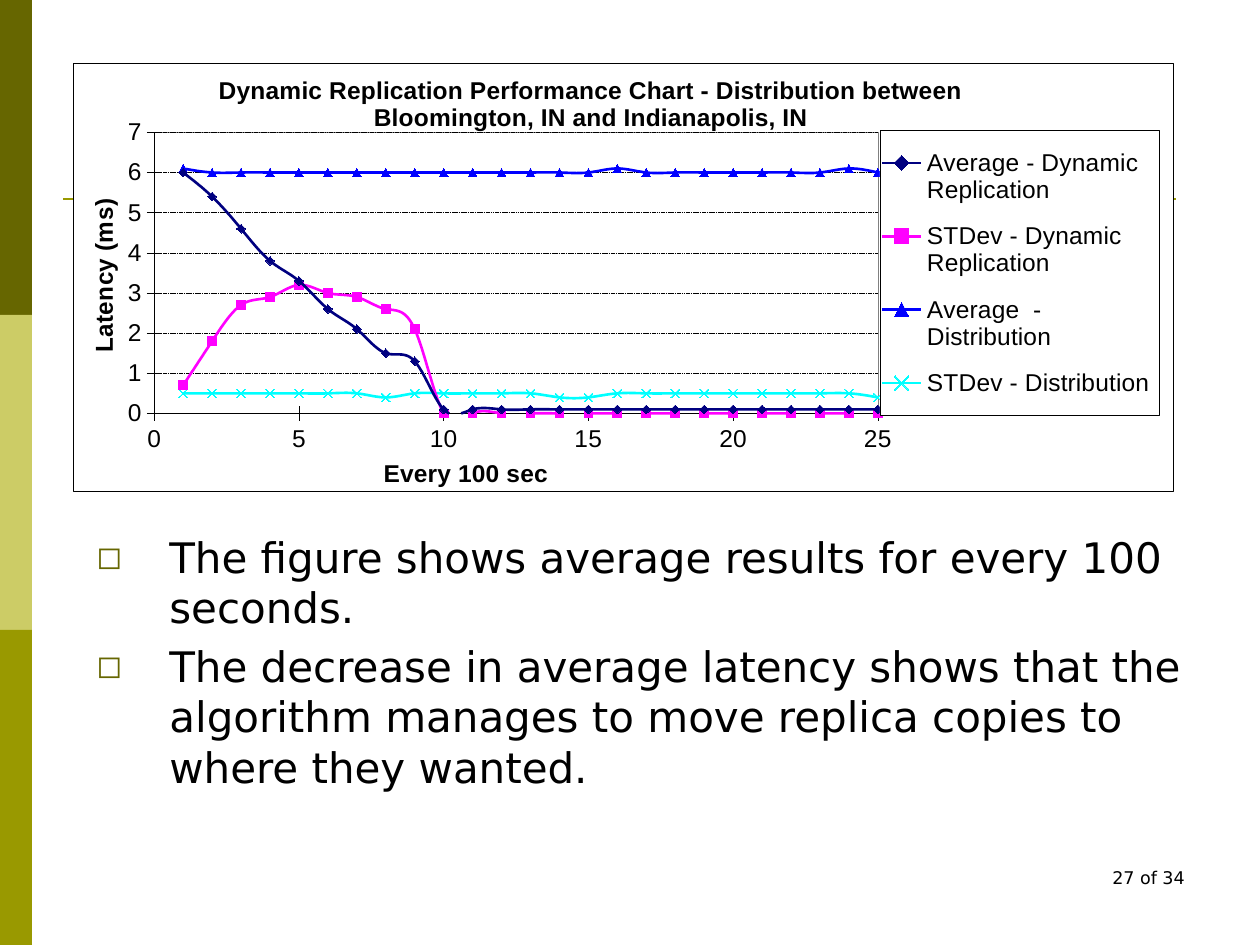
from lxml import etree
from pptx import Presentation
from pptx.chart.data import XyChartData
from pptx.dml.color import RGBColor
from pptx.enum.chart import XL_CHART_TYPE, XL_LEGEND_POSITION, XL_MARKER_STYLE, XL_TICK_MARK
from pptx.enum.dml import MSO_LINE
from pptx.enum.shapes import MSO_CONNECTOR, MSO_SHAPE
from pptx.enum.text import PP_ALIGN
from pptx.oxml import parse_xml
from pptx.oxml.ns import nsdecls, qn
from pptx.util import Emu, Pt

SCATTER = XL_CHART_TYPE.XY_SCATTER_SMOOTH
LEGEND_RIGHT = XL_LEGEND_POSITION.RIGHT
TICK_CROSS, TICK_NONE = XL_TICK_MARK.CROSS, XL_TICK_MARK.NONE
SHORT_DASH = MSO_LINE.SQUARE_DOT
STRAIGHT, RECTANGLE = MSO_CONNECTOR.STRAIGHT, MSO_SHAPE.RECTANGLE
LEFT, RIGHT = PP_ALIGN.LEFT, PP_ALIGN.RIGHT
PX_PER_INCH = 126
CHART_WIDTH, CHART_HEIGHT = 1100, 432
BODY_FONT, CHART_FONT = "DejaVu Sans", "Arial"
BLACK, WHITE, GRAY, OLIVE = "000000", "FFFFFF", "808080", "666600"
BANDS = [OLIVE, "CCCC66", "999900"]
POINTS = [
    "The figure shows average results for every 100 seconds.",
    "The decrease in average latency shows that the algorithm manages to move "
    "replica copies to where they wanted.",
]
TITLE = ("Dynamic Replication Performance Chart - Distribution between "
         "Bloomington, IN and Indianapolis, IN")
SERIES = [
    ("Average - Dynamic Replication", "000080", XL_MARKER_STYLE.DIAMOND,
     [6, 5.4, 4.6, 3.8, 3.3, 2.6, 2.1, 1.5, 1.3] + [0.1] * 16),
    ("STDev - Dynamic Replication", "FF00FF", XL_MARKER_STYLE.SQUARE,
     [0.7, 1.8, 2.7, 2.9, 3.2, 3, 2.9, 2.6, 2.1] + [0] * 16),
    ("Average  - Distribution ", "0000FF", XL_MARKER_STYLE.TRIANGLE,
     [6.1] + [6] * 14 + [6.1] + [6] * 7 + [6.1, 6]),
    ("STDev - Distribution ", "00FFFF", XL_MARKER_STYLE.X,
     [0.5] * 7 + [0.4] + [0.5] * 5 + [0.4] * 2 + [0.5] * 9 + [0.4]),
]


def px(length):
    """Turn pixels into EMU."""
    return Emu(round(length * 914400 / PX_PER_INCH))


def color(value):
    """Turn a hex string into a colour."""
    return RGBColor.from_string(value)


def apply_format(target, values):
    """Set each named attribute on the target."""
    for name, value in values.items():
        setattr(target, name, value)


def set_font(font, name, size, bold=False):
    """Give a font its face, size and black colour."""
    apply_format(font, {"name": name, "size": Pt(size), "bold": bold})
    font.color.rgb = color(BLACK)


def set_line(line, value, width):
    """Give a line its colour and width."""
    line.color.rgb = color(value)
    line.width = Pt(width)


def add_band(page, top, height, fill):
    """Add one block of the left colour strip."""
    band = page.shapes.add_shape(RECTANGLE, 0, px(top), px(32), px(height))
    band.shadow.inherit = False
    band.fill.solid()
    band.fill.fore_color.rgb = color(fill)
    band.line.fill.background()


def add_rule(page, left, right, top):
    """Add the horizontal rule."""
    rule = page.shapes.add_connector(STRAIGHT, px(left), px(top), px(right), px(top))
    set_line(rule.line, BANDS[2], 1.5)
    etree.SubElement(rule.element.spPr, qn("a:effectLst"))


def add_bullet(para):
    """Give a paragraph a hollow square bullet with a hanging indent."""
    properties = para._p.get_or_add_pPr()
    properties.set("marL", str(px(73)))
    properties.set("indent", str(-px(73)))
    color_part = etree.SubElement(properties, qn("a:buClr"))
    etree.SubElement(color_part, qn("a:srgbClr"), val=OLIVE)
    etree.SubElement(properties, qn("a:buSzPct"), val="75000")
    etree.SubElement(properties, qn("a:buFont"), typeface=BODY_FONT)
    etree.SubElement(properties, qn("a:buChar"), char="◻")


def add_text(page, bounds, lines, size, align=LEFT, bulleted=False):
    """Add a text box with one paragraph per line."""
    box = page.shapes.add_textbox(*map(px, bounds))
    frame = box.text_frame
    frame.word_wrap = True
    for index, line in enumerate(lines):
        para = frame.paragraphs[0] if index == 0 else frame.add_paragraph()
        para.alignment = align
        span = para.add_run()
        span.text = line
        set_font(span.font, BODY_FONT, size)
        if bulleted:
            para.space_before = Pt(size * 0.2)
            add_bullet(para)


def place_part(part, bounds, inner=False):
    """Fix the place of a chart part, in px from the chart corner."""
    for old in part.findall(qn("c:layout")):
        part.remove(old)
    layout = etree.Element(qn("c:layout"))
    manual = etree.SubElement(layout, qn("c:manualLayout"))
    if inner:
        etree.SubElement(manual, qn("c:layoutTarget"), val="inner")
    for name in ("xMode", "yMode"):
        etree.SubElement(manual, qn(f"c:{name}"), val="edge")
    for name, length, whole in zip("xywh", bounds, (CHART_WIDTH, CHART_HEIGHT) * 2):
        etree.SubElement(manual, qn(f"c:{name}"), val=str(length / whole))
    overlay = part.find(qn("c:overlay"))
    if overlay is None:
        part.insert(0, layout)
    else:
        overlay.addprevious(layout)


def frame_xml(line, fill=None):
    """Make the fill and thin border of a chart part."""
    paint = f'<a:solidFill><a:srgbClr val="{fill}"/></a:solidFill>' if fill else "<a:noFill/>"
    return parse_xml(
        f'<c:spPr {nsdecls("c", "a")}>{paint}<a:ln w="3175"><a:solidFill>'
        f'<a:srgbClr val="{line}"/></a:solidFill></a:ln></c:spPr>')


def set_title(title, text, corner):
    """Write and place a chart or axis title."""
    span = title.text_frame.paragraphs[0].add_run()
    span.text = text
    set_font(span.font, CHART_FONT, 14, True)
    place_part(title.element, corner)


def format_axis(axis, maximum, step, text, corner):
    """Set the scale, ticks, line and title of an axis."""
    apply_format(axis, {
        "minimum_scale": 0, "maximum_scale": maximum, "major_unit": step,
        "major_tick_mark": TICK_CROSS, "minor_tick_mark": TICK_NONE,
        "has_major_gridlines": False, "has_title": True})
    set_font(axis.tick_labels.font, CHART_FONT, 14)
    set_line(axis.format.line, BLACK, 0.25)
    set_title(axis.axis_title, text, corner)


def format_series(series, value, marker_style):
    """Give a series its line and markers."""
    set_line(series.format.line, value, 1.5)
    marker = series.marker
    apply_format(marker, {"style": marker_style, "size": 5})
    set_line(marker.format.line, value, 0.75)
    if marker_style == XL_MARKER_STYLE.X:
        marker.format.fill.background()
    else:
        marker.format.fill.solid()
        marker.format.fill.fore_color.rgb = color(value)


def add_latency_chart(page, bounds):
    """Add the scatter chart of latency over time."""
    data = XyChartData()
    for name, _, _, latencies in SERIES:
        entry = data.add_series(name)
        for step, latency in enumerate(latencies, 1):
            entry.add_data_point(step, latency)
    chart = page.shapes.add_chart(SCATTER, *map(px, bounds), data).chart
    set_font(chart.font, CHART_FONT, 8)
    apply_format(chart, {"has_title": True, "has_legend": True})
    chart.plots[0].vary_by_categories = False
    set_title(chart.chart_title, TITLE, (141, 7))
    format_axis(chart.category_axis, 25, 5, "Every 100 sec", (306, 394))
    format_axis(chart.value_axis, 7, 1, "Latency (ms) ", (10, 127))
    chart.value_axis.has_major_gridlines = True
    grid = chart.value_axis.major_gridlines.format.line
    set_line(grid, BLACK, 0.25)
    grid.dash_style = SHORT_DASH
    for series, (_, value, marker_style, _) in zip(chart.plots[0].series, SERIES):
        format_series(series, value, marker_style)
    for smooth in chart.element.iter(qn("c:smooth")):
        smooth.set("val", "1")
    apply_format(chart.legend, {"position": LEGEND_RIGHT, "include_in_layout": False})
    set_font(chart.legend.font, CHART_FONT, 14)
    body = chart.element.find(qn("c:chart"))
    legend, plot = body.find(qn("c:legend")), body.find(qn("c:plotArea"))
    place_part(legend, (807, 68, 279, 288))
    place_part(plot, (81, 70, 724, 284), inner=True)
    legend.find(qn("c:overlay")).addnext(frame_xml(BLACK, WHITE))
    plot.append(frame_xml(GRAY))
    body.addnext(frame_xml(BLACK, WHITE))


def main():
    """Build and save the slide."""
    deck = Presentation()
    apply_format(deck, {"slide_width": px(1260), "slide_height": px(945)})
    page = deck.slides.add_slide(deck.slide_layouts[6])
    for index, fill in enumerate(BANDS):
        add_band(page, index * 315, 315, fill)
    add_rule(page, 63, 1176, 199)
    add_text(page, (903, 861, 294, 63), ["27 of 34"], 10, align=RIGHT)
    add_text(page, (84, 525, 1124, 336), POINTS, 24, bulleted=True)
    add_latency_chart(page, (73, 63, CHART_WIDTH, CHART_HEIGHT))
    deck.save("out.pptx")


if __name__ == "__main__":
    main()
